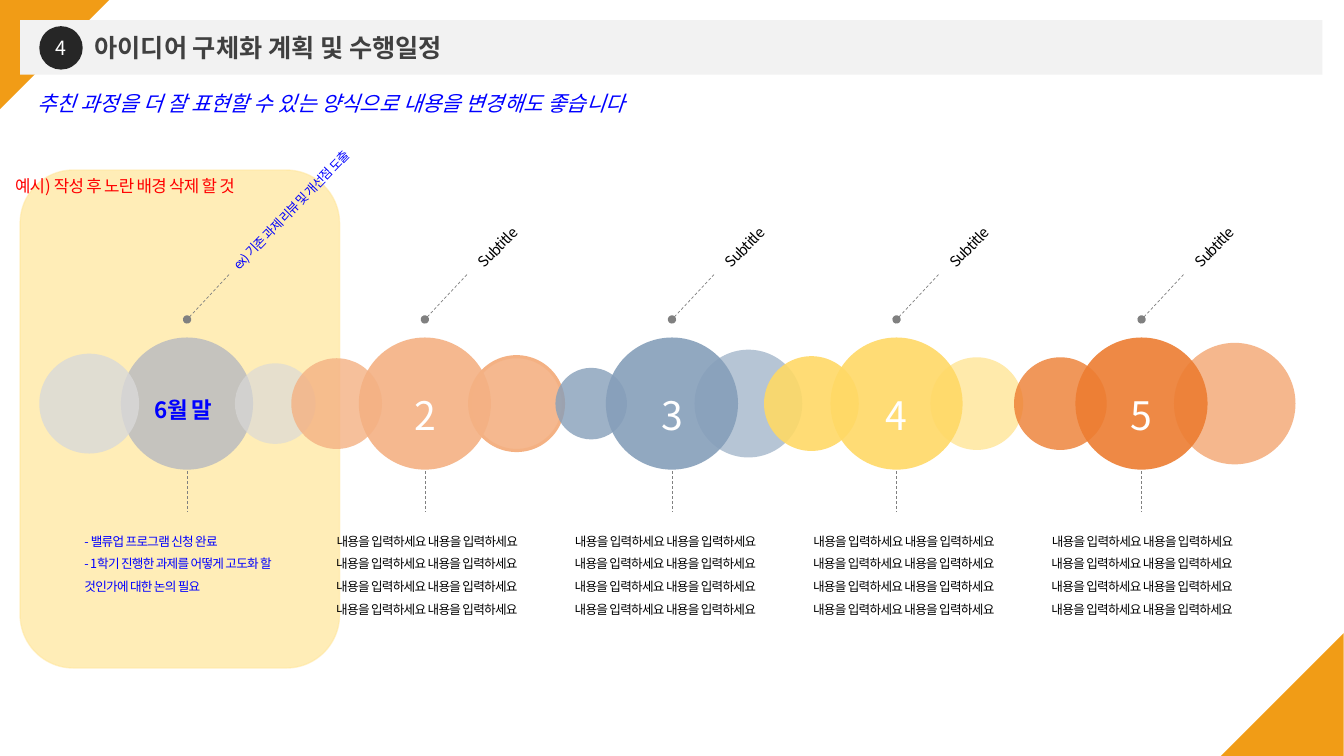
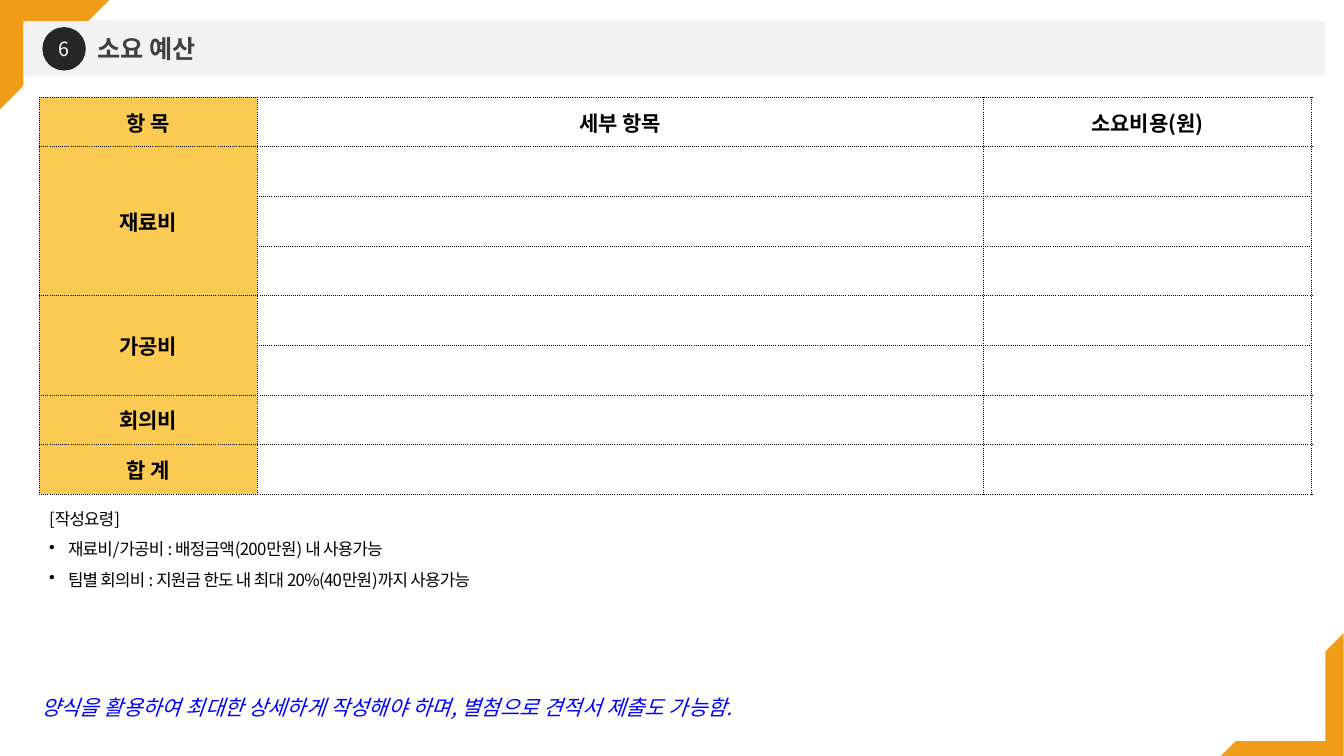
from collections import namedtuple

from lxml.etree import SubElement
from pptx import Presentation
from pptx.dml.color import RGBColor
from pptx.enum.dml import MSO_LINE_DASH_STYLE as Dash
from pptx.enum.shapes import MSO_CONNECTOR as Connector, MSO_SHAPE as Shape
from pptx.enum.text import MSO_ANCHOR as Anchor, MSO_AUTO_SIZE as AutoSize, PP_ALIGN as Align
from pptx.oxml.ns import qn
from pptx.util import Pt

FONT = "Noto Sans CJK KR"
COLORS = {
    "accent": "F19C16", "band": "F2F2F2", "badge": "262626", "title": "404040",
    "white": "FFFFFF", "black": "000000", "guide": "0000FF", "warning": "FF0000",
    "highlight": "FFE699", "leader": "808080", "header": "FBCA53",
    "gray": "BFBFBF", "pale_gray": "D9D9D9", "peach": "F4B183",
    "blue": "869FBA", "yellow": "FFD966", "orange": "ED7D31",
}
TIGHT = {"spacing": 1.5, "tracking": -0.5}
GUIDE = {"size": 15, "color": "guide", "italic": True, "wrap": False}
AXIS_Y = 288.3
HUB = 94.4

# Satellites are (center x, diameter, opacity in percent).
Stage = namedtuple("Stage", "center hub_color side_color left right outline")
STAGES = [
    Stage(133.6, "gray", "pale_gray", (63.7, 71.3, 80), (196.6, 57.6, 65), 0),
    Stage(303.5, "peach", "peach", (240.5, 64.8, 80), (369, 67, 90), 2.25),
    Stage(480, "blue", "blue", (422.3, 51.1, 80), (534.6, 77, 60), 0),
    Stage(640.4, "yellow", "yellow", (579.6, 67.7, 90), (697.7, 66.2, 55), 0),
    Stage(815.4, "orange", "orange", (757.4, 66.2, 80), (882, 86.8, 55), 0),
]
PHRASE = "내용을 입력하세요 내용을 입력하세요"
PLAN = "- 밸류업 프로그램 신청 완료\n- 1학기 진행한 과제를 어떻게 고도화 할 것인가에 대한 논의 필요"

BUDGET_COLUMNS = [155.5, 518.8, 234.6]
BUDGET_HEADINGS = ["항 목", "세부 항목", "소요비용(원)"]
BUDGET_ITEMS = [("재료비", 3), ("가공비", 2), ("회의비", 1), ("합 계", 1)]


def rgb(name):
    return RGBColor.from_string(COLORS[name])


def set_opacity(holder, percent):
    """Set the opacity of the solid fill found directly inside holder."""
    color = holder.find(qn("a:solidFill"))[0]
    SubElement(color, qn("a:alpha"), val=str(percent * 1000))


def write(frame, text, *, size, color="black", bold=False, italic=False,
          align=Align.LEFT, spacing=None, tracking=0, bullet_from=None):
    """Fill frame with one paragraph a line; bullets start at line bullet_from."""
    for index, line in enumerate(text.split("\n")):
        para = frame.paragraphs[0] if index == 0 else frame.add_paragraph()
        para.alignment = align
        if spacing:
            para.line_spacing = spacing
        if bullet_from is not None and index >= bullet_from:
            layout = para._p.get_or_add_pPr()
            layout.set("marL", str(Pt(13.5)))
            layout.set("indent", str(-Pt(13.5)))
            SubElement(layout, qn("a:buChar"), char="•")
        span = para.add_run()
        span.text = line
        span.font.name = FONT
        span.font.size = Pt(size)
        span.font.bold = bold
        span.font.italic = italic
        span.font.color.rgb = rgb(color)
        style = span._r.get_or_add_rPr()
        if tracking:
            style.set("spc", str(int(tracking * 100)))
        SubElement(style, qn("a:ea"), typeface=FONT)


def set_borders(cell):
    style = cell._tc.get_or_add_tcPr()
    for position, side in enumerate(("lnL", "lnR", "lnT", "lnB")):
        line = SubElement(style, qn(f"a:{side}"), w=str(Pt(0.25)))
        style.insert(position, line)
        fill = SubElement(line, qn("a:solidFill"))
        SubElement(fill, qn("a:srgbClr"), val=COLORS["black"])
        SubElement(line, qn("a:prstDash"), val="sysDot")


class Builder:
    def __init__(self):
        self.deck = Presentation()
        self.deck.slide_width, self.deck.slide_height = Pt(960), Pt(540)
        self.page = None

    def new_page(self):
        self.page = self.deck.slides.add_slide(self.deck.slide_layouts[6])
        self.shape(Shape.RIGHT_TRIANGLE, 0, -0.5, 78.5, 78.5, "accent", rotation=90)
        self.shape(Shape.RIGHT_TRIANGLE, 872, 452.2, 87.8, 87.8, "accent", rotation=270)

    def shape(self, kind, left, top, width, height, fill, opacity=100,
              rotation=0, outline=0, outline_opacity=100):
        shape = self.page.shapes.add_shape(kind, Pt(left), Pt(top), Pt(width), Pt(height))
        shape.shadow.inherit = False
        shape.rotation = rotation
        shape.fill.solid()
        shape.fill.fore_color.rgb = rgb(fill)
        properties = shape.element.spPr
        if opacity < 100:
            set_opacity(properties, opacity)
        if outline:
            shape.line.color.rgb = rgb(fill)
            shape.line.width = Pt(outline)
            if outline_opacity < 100:
                set_opacity(properties.find(qn("a:ln")), outline_opacity)
        else:
            shape.line.fill.background()
        return shape

    def circle(self, center, diameter, fill, opacity, outline=0):
        """Draw a circle on the timeline axis."""
        self.shape(Shape.OVAL, center - diameter / 2, AXIS_Y - diameter / 2,
                   diameter, diameter, fill, opacity, outline=outline)

    def text(self, content, left, top, width, height, wrap=True, rotation=0, **style):
        box = self.page.shapes.add_textbox(Pt(left), Pt(top), Pt(width), Pt(height))
        box.rotation = rotation
        box.text_frame.word_wrap = wrap
        box.text_frame.auto_size = AutoSize.SHAPE_TO_FIT_TEXT
        write(box.text_frame, content, **style)

    def leader(self, x1, y1, x2, y2, dot=False):
        line = self.page.shapes.add_connector(
            Connector.STRAIGHT, Pt(x1), Pt(y1), Pt(x2), Pt(y2))
        line.line.color.rgb = rgb("leader")
        line.line.width = Pt(0.5)
        line.line.dash_style = Dash.DASH
        properties = line.element.spPr
        if dot:
            SubElement(properties.find(qn("a:ln")), qn("a:headEnd"), type="oval")
        SubElement(properties, qn("a:effectLst"))

    def header(self, number, title, left, top):
        self.shape(Shape.RECTANGLE, left, top, 930.2, 39, "band")
        self.text(title, left + 46, top + 5, 434, 29, size=18, color="title", bold=True)
        badge = self.shape(Shape.OVAL, left + 13.7, top + 4.3, 31, 31, "badge")
        badge.text_frame.vertical_anchor = Anchor.MIDDLE
        write(badge.text_frame, number, size=14, color="white", align=Align.CENTER)

    def table(self, left, top, widths, row_height, rows):
        frame = self.page.shapes.add_table(
            rows, len(widths), Pt(left), Pt(top), Pt(sum(widths)), Pt(row_height * rows))
        table = frame.table
        table.first_row = table.horz_banding = False
        for column, width in zip(table.columns, widths):
            column.width = Pt(width)
        for row in table.rows:
            row.height = Pt(row_height)
            for index, cell in enumerate(row.cells):
                if index == 0:
                    cell.fill.solid()
                    cell.fill.fore_color.rgb = rgb("header")
                else:
                    cell.fill.background()
                cell.vertical_anchor = Anchor.MIDDLE
                set_borders(cell)
        return table


def draw_hub(builder, stage):
    builder.circle(stage.center, HUB, stage.hub_color, 90)


def draw_stage_labels(builder, index, stage):
    center, is_example = stage.center, index == 0
    builder.leader(center, 228.2, center + 31, 195.1, dot=True)
    builder.leader(center, 336.7, center, 365.5)

    if is_example:
        name, name_box = "6월 말", (95, 270, 72, 33.1)
        name_style = {"size": 16, "color": "guide", "bold": True}
        subtitle, middle, width, height = "ex) 기존 과제 리뷰 및 개선점 도출", (75.4, 144), 138.2, 21.6
        subtitle_style = {"size": 9, "color": "guide"}
        body, body_style = PLAN, {"color": "guide"}
    else:
        name, name_box = str(index + 1), (center - 22, 259.2, 44, 58.3)
        name_style = {"size": 28, "color": "white"}
        subtitle, middle, width, height = "Subtitle", (73, 150.8), 115.2, 26.6
        subtitle_style = {"size": 10.5}
        body = f"{PHRASE} {PHRASE}\n{PHRASE}\n{PHRASE}"
        body_style = {"align": Align.CENTER}

    builder.text(name, *name_box, align=Align.CENTER, **name_style, **TIGHT)
    builder.text(subtitle, center + middle[0] - width / 2, middle[1] - height / 2,
                 width, height, rotation=314.2, **subtitle_style, **TIGHT)
    builder.text(body, 53.2 + 170.3 * index, 372.2, 162.7, 72.7,
                 size=9, **body_style, **TIGHT)


def build_schedule(builder):
    builder.new_page()
    builder.shape(Shape.ROUNDED_RECTANGLE, 14.4, 121.5, 228.2, 355.7, "highlight", 70,
                  outline=1, outline_opacity=50)
    builder.header("4", "아이디어 구체화 계획 및 수행일정", 14.4, 14.4)
    front = STAGES[2]
    for stage in STAGES:
        if stage is not front:
            draw_hub(builder, stage)
    for stage in STAGES:
        builder.circle(*stage.left[:2], stage.side_color, stage.left[2])
        builder.circle(*stage.right[:2], stage.side_color, stage.right[2], stage.outline)
    draw_hub(builder, front)
    for index, stage in enumerate(STAGES):
        draw_stage_labels(builder, index, stage)
    builder.text("추친 과정을 더 잘 표현할 수 있는 양식으로 내용을 변경해도 좋습니다",
                 19.6, 61.2, 456.5, 25.4, **GUIDE)
    builder.text("예시) 작성 후 노란 배경 삭제 할 것", -10, 114.5, 198.7, 28.8,
                 size=12, color="warning", align=Align.CENTER, **TIGHT)


def build_budget(builder):
    builder.new_page()
    builder.shape(Shape.RECTANGLE, 16.6, 18.7, 930.2, 510.5, "white")
    builder.header("6", "소요 예산", 16.6, 15.1)
    row_count = 1 + sum(rows for _, rows in BUDGET_ITEMS)
    table = builder.table(28, 69.3, BUDGET_COLUMNS, 35.45, row_count)
    label = {"size": 15, "bold": True, "align": Align.CENTER}
    for column, heading in enumerate(BUDGET_HEADINGS):
        write(table.cell(0, column).text_frame, heading, **label)
    first = 1
    for item, rows in BUDGET_ITEMS:
        cell = table.cell(first, 0)
        if rows > 1:
            cell.merge(table.cell(first + rows - 1, 0))
        write(cell.text_frame, item, **label)
        first += rows
    builder.text("양식을 활용하여 최대한 상세하게 작성해야 하며, 별첨으로 견적서 제출도 가능함.",
                 22.4, 492.5, 528.5, 25.4, **GUIDE)
    builder.text("[작성요령]\n재료비/가공비 : 배정금액(200만원) 내 사용가능\n"
                 "팀별 회의비 : 지원금 한도 내 최대 20%(40만원)까지 사용가능",
                 28, 352.8, 445, 72.7, size=12, bullet_from=1, **TIGHT)


def main():
    builder = Builder()
    build_schedule(builder)
    build_budget(builder)
    builder.deck.save("out.pptx")


if __name__ == "__main__":
    main()
